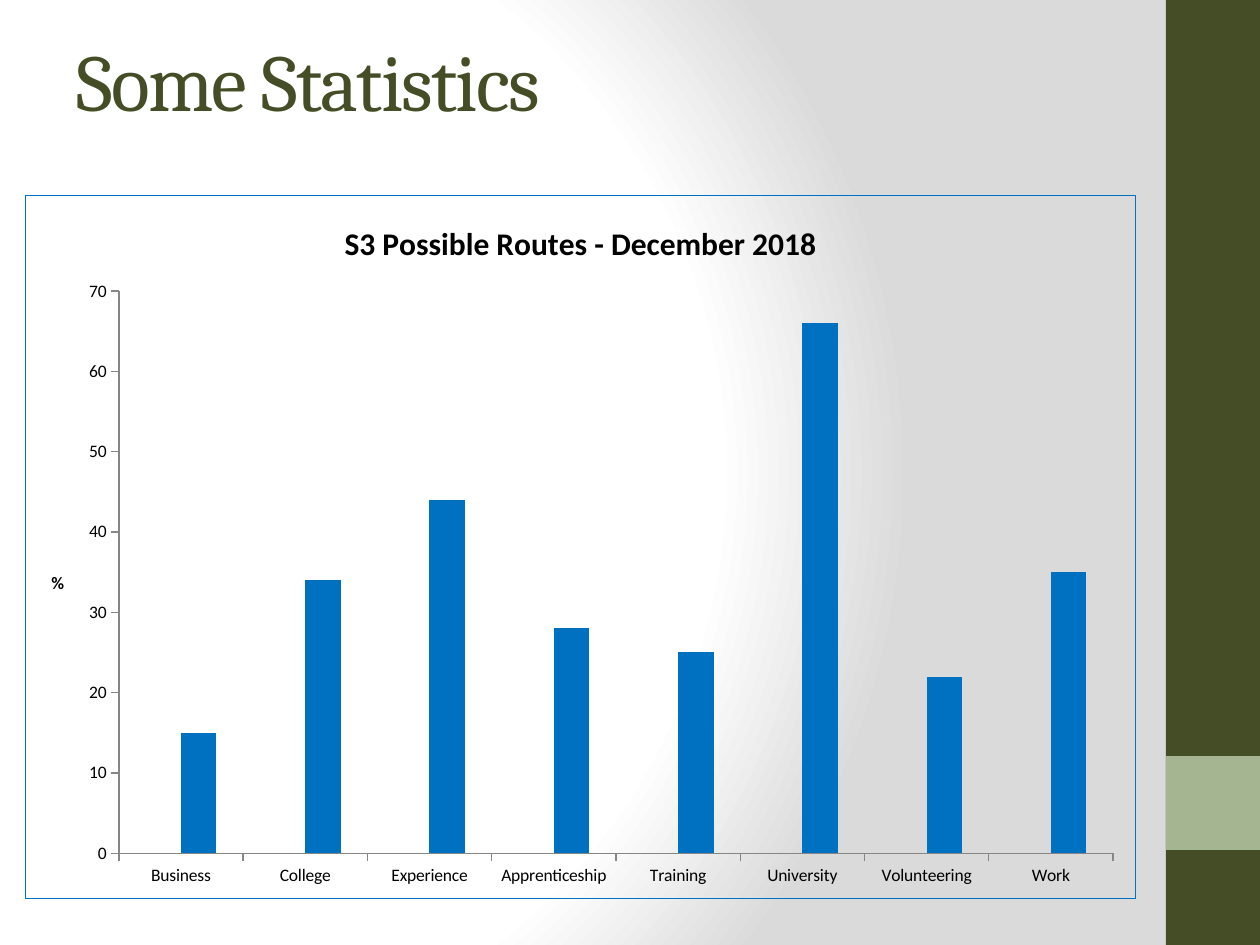
from lxml import etree
from pptx import Presentation
from pptx import util as u
from pptx.chart.data import CategoryChartData
from pptx.dml.color import RGBColor
from pptx.enum import chart as ch, shapes, text
from pptx.oxml import parse_xml
from pptx.oxml.ns import nsdecls, qn

EMU_PER_PX = 914400 / 126
COLORS = {"olive": "444D26", "sage": "A5B592", "blue": "0070C0", "black": "000000",
          "axis": "868686", "white": "FFFFFF", "grey": "DADADA"}
ROUTES = {"Business": 15, "College": 34, "Experience": 44, "Apprenticeship": 28,
          "Training": 25, "University": 66, "Volunteering": 22, "Work": 35}


def px(length):
    return u.Emu(round(length * EMU_PER_PX))


def color(name):
    return RGBColor.from_string(COLORS[name])


def paint_background(page):
    """Fill the page with a radial gradient, white at the left."""
    stops = "".join(
        f'<a:gs pos="{percent * 1000}"><a:srgbClr val="{COLORS[name]}"/></a:gs>'
        for percent, name in ((0, "white"), (75, "white"), (100, "grey")))
    gradient = parse_xml(
        f'<a:gradFill {nsdecls("a")} rotWithShape="1"><a:gsLst>{stops}</a:gsLst>'
        '<a:path path="circle"><a:fillToRect l="20000" t="50000" r="100000" b="50000"/>'
        '</a:path></a:gradFill>')
    fill = page.background.fill
    fill.solid()
    solid = page.element.find(".//" + qn("p:bgPr")).find(qn("a:solidFill"))
    solid.getparent().replace(solid, gradient)


def add_block(page, left, top, width, height, name):
    block = page.shapes.add_shape(shapes.MSO_SHAPE.RECTANGLE,
                                  px(left), px(top), px(width), px(height))
    block.shadow.inherit = False
    block.fill.solid()
    block.fill.fore_color.rgb = color(name)
    block.line.fill.background()


def set_title(page, words):
    title = page.shapes.title
    title.left, title.top, title.width, title.height = px(64), px(0), px(1050), px(158)
    frame = title.text_frame
    frame.text = words
    frame.word_wrap = True
    frame.auto_size = text.MSO_AUTO_SIZE.NONE
    frame.vertical_anchor = text.MSO_ANCHOR.MIDDLE
    para = frame.paragraphs[0]
    para.alignment = text.PP_ALIGN.LEFT
    para.font.name = "Cambria"
    para.font.size = u.Pt(46)
    para.font.color.rgb = color("olive")
    para.runs[0].font._element.set("spc", "-100")


def style_axis(axis):
    axis.has_major_gridlines = False
    axis.major_tick_mark = ch.XL_TICK_MARK.OUTSIDE
    axis.minor_tick_mark = ch.XL_TICK_MARK.NONE
    axis.format.line.color.rgb = color("axis")
    axis.format.line.width = u.Pt(0.75)


def set_chart_text(owner, words, size):
    frame = owner.text_frame
    frame.text = words
    font = frame.paragraphs[0].font
    font.name = "Calibri"
    font.size = u.Pt(size)
    font.bold = True
    font.color.rgb = color("black")
    return frame


def frame_chart(chart):
    """Outline the whole chart and leave it unfilled."""
    outline = parse_xml(
        f'<c:spPr {nsdecls("c", "a")}><a:noFill/><a:ln w="9525"><a:solidFill>'
        f'<a:srgbClr val="{COLORS["blue"]}"/></a:solidFill></a:ln></c:spPr>')
    chart.element.find(qn("c:txPr")).addprevious(outline)


def place_plot(chart, **fractions):
    """Fix the inner plot area as fractions of the chart."""
    area = chart.element.find(".//" + qn("c:plotArea"))
    for old in area.findall(qn("c:layout")):
        area.remove(old)
    layout = etree.Element(qn("c:layout"))
    manual = etree.SubElement(layout, qn("c:manualLayout"))
    settings = {"layoutTarget": "inner", "xMode": "edge", "yMode": "edge", **fractions}
    for key, value in settings.items():
        etree.SubElement(manual, qn(f"c:{key}")).set("val", str(value))
    area.insert(0, layout)


def add_routes_chart(page):
    data = CategoryChartData()
    data.categories = list(ROUTES)
    data.add_series("Series 1", [None] * len(ROUTES))
    data.add_series("Series 2", list(ROUTES.values()))
    chart = page.shapes.add_chart(ch.XL_CHART_TYPE.COLUMN_CLUSTERED,
                                  px(25), px(195), px(1111), px(704), data).chart
    chart.font.name = "Calibri"
    chart.font.size = u.Pt(10)
    chart.font.color.rgb = color("black")
    chart.has_legend = False
    chart.has_title = True
    set_chart_text(chart.chart_title, "S3 Possible Routes - December 2018", 18)
    chart.chart_title.include_in_layout = False

    plot = chart.plots[0]
    plot.gap_width = 150
    plot.overlap = 0
    plot.vary_by_categories = False
    for series, name in zip(plot.series, ("sage", "blue")):
        series.format.fill.solid()
        series.format.fill.fore_color.rgb = color(name)

    style_axis(chart.category_axis)
    values = chart.value_axis
    style_axis(values)
    values.minimum_scale, values.maximum_scale, values.major_unit = 0, 70, 10
    unit = set_chart_text(values.axis_title, "%", 10)
    body = unit._txBody.find(qn("a:bodyPr"))
    body.set("rot", "0")
    body.set("vert", "horz")
    frame_chart(chart)
    place_plot(chart, x=0.084, y=0.136, w=0.896, h=0.8)


def main():
    deck = Presentation()
    deck.slide_width, deck.slide_height = px(1260), px(945)
    page = deck.slides.add_slide(deck.slide_layouts[5])
    paint_background(page)
    add_block(page, 1166, 0, 94, 945, "olive")
    add_block(page, 1166, 756, 94, 94, "sage")
    set_title(page, "Some Statistics")
    add_routes_chart(page)
    deck.save("out.pptx")


if __name__ == "__main__":
    main()
